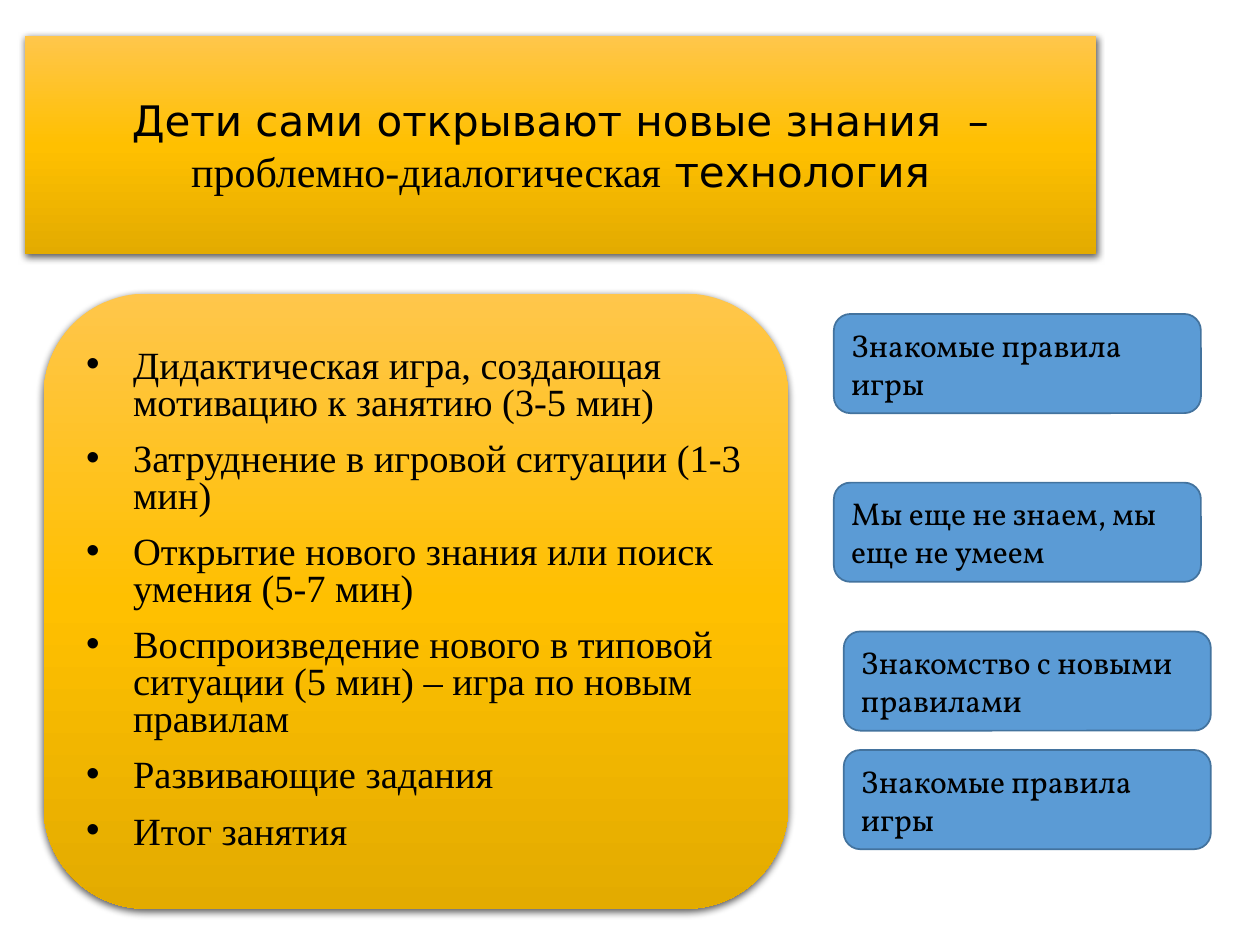
from lxml.etree import SubElement
from pptx import Presentation
from pptx.dml.color import RGBColor as RGB
from pptx.enum.shapes import MSO_SHAPE as Kind
from pptx.enum.text import MSO_ANCHOR as Anchor, PP_ALIGN as Align
from pptx.oxml.ns import qn
from pptx.util import Cm, Pt

BLACK = RGB(0x00, 0x00, 0x00)
BLUE = RGB(0x5B, 0x9B, 0xD5)
NAVY = RGB(0x43, 0x73, 0x9E)
GOLD = ((0, RGB(0xFF, 0xC6, 0x4B)),
        (50, RGB(0xFF, 0xC0, 0x00)),
        (100, RGB(0xE3, 0xAB, 0x00)))

SANS, SERIF, NOTE = "DejaVu Sans", "Times New Roman", "Vollkorn"

TITLE = (("Дети сами открывают новые знания  – ", SANS),
         ("проблемно-диалогическая", SERIF),
         (" технология", SANS))
STEPS = ("Дидактическая игра, создающая мотивацию к занятию (3-5 мин)",
         "Затруднение в игровой ситуации (1-3 мин)",
         "Открытие нового знания или поиск умения (5-7 мин)",
         "Воспроизведение нового в типовой ситуации (5 мин) – игра по новым правилам",
         "Развивающие задания",
         "Итог занятия")
# Left and top offsets within the notes column, in cm
NOTES = (("Знакомые правила игры", 0, 0),
         ("Мы еще не знаем, мы еще не умеем", 0, 3.4),
         ("Знакомство с новыми правилами", 0.2, 6.4),
         ("Знакомые правила игры", 0.2, 8.79))


def style(item, **values):
    for name, value in values.items():
        setattr(item, name, value)


def write(para, text, font, size):
    run = para.add_run()
    run.text = text
    style(run.font, name=font, size=Pt(size))
    run.font.color.rgb = BLACK


def node(parent, tag, **values):
    return SubElement(parent, qn("a:" + tag),
                      {key: str(val) for key, val in values.items()})


def gild(shape):
    """Give a shape the gold gradient, no outline and a soft shadow."""
    props = shape.fill._xPr
    grad = node(props, "gradFill", rotWithShape=1)
    stops = node(grad, "gsLst")
    for pos, color in GOLD:
        node(node(stops, "gs", pos=pos * 1000), "srgbClr", val=color)
    node(grad, "lin", ang=5400000, scaled=0)
    node(node(props, "ln"), "noFill")
    shade = node(node(props, "effectLst"), "outerShdw", blurRad=Pt(4.5),
                 dist=Pt(1.5), dir=5400000, algn="ctr", rotWithShape=0)
    node(node(shade, "srgbClr", val=BLACK), "alpha", val=63000)


def round_box(slide, left, top, width, height):
    shape = slide.shapes.add_shape(Kind.ROUNDED_RECTANGLE, Cm(left), Cm(top),
                                   Cm(width), Cm(height))
    style(shape.text_frame, word_wrap=True, vertical_anchor=Anchor.MIDDLE)
    return shape


def add_title(slide, left, top, width, height):
    title = slide.shapes.title
    style(title, left=Cm(left), top=Cm(top), width=Cm(width), height=Cm(height))
    node(node(title.fill._xPr, "prstGeom", prst="roundRect"), "avLst")
    gild(title)
    frame = title.text_frame
    style(frame, word_wrap=True, vertical_anchor=Anchor.MIDDLE)
    para = frame.paragraphs[0]
    para.alignment = Align.CENTER
    for text, font in TITLE:
        write(para, text, font, 24)


def add_steps(slide, left, top, width, height):
    box = round_box(slide, left, top, width, height)
    gild(box)
    frame = box.text_frame
    for i, text in enumerate(STEPS):
        para = frame.add_paragraph() if i else frame.paragraphs[0]
        style(para, alignment=Align.LEFT, line_spacing=0.8,
              space_before=Pt(11 if i else 0))
        props = para._p.get_or_add_pPr()
        props.set("marL", str(Cm(0.95)))
        props.set("indent", str(-Cm(0.95)))
        node(props, "buFont", typeface="Arial")
        node(props, "buChar", char="•")
        write(para, text, SERIF, 22)


def add_notes(slide, left, top, width, height):
    """Place the notes column; width and height are those of one note."""
    for text, across, down in NOTES:
        box = round_box(slide, left + across, top + down, width, height)
        box.shadow.inherit = False
        box.fill.solid()
        box.fill.fore_color.rgb = BLUE
        box.line.color.rgb = NAVY
        box.line.width = Pt(1)
        para = box.text_frame.paragraphs[0]
        para.alignment = Align.LEFT
        write(para, text, NOTE, 18)


def main():
    deck = Presentation()
    style(deck, slide_width=Cm(25.4), slide_height=Cm(19.05))
    slide = deck.slides.add_slide(deck.slide_layouts[5])
    add_title(slide, 0.5, 0.73, 21.6, 4.4)
    add_steps(slide, 0.88, 5.92, 15.01, 12.4)
    add_notes(slide, 16.81, 6.33, 7.4, 2)
    deck.save("out.pptx")


if __name__ == "__main__":
    main()
